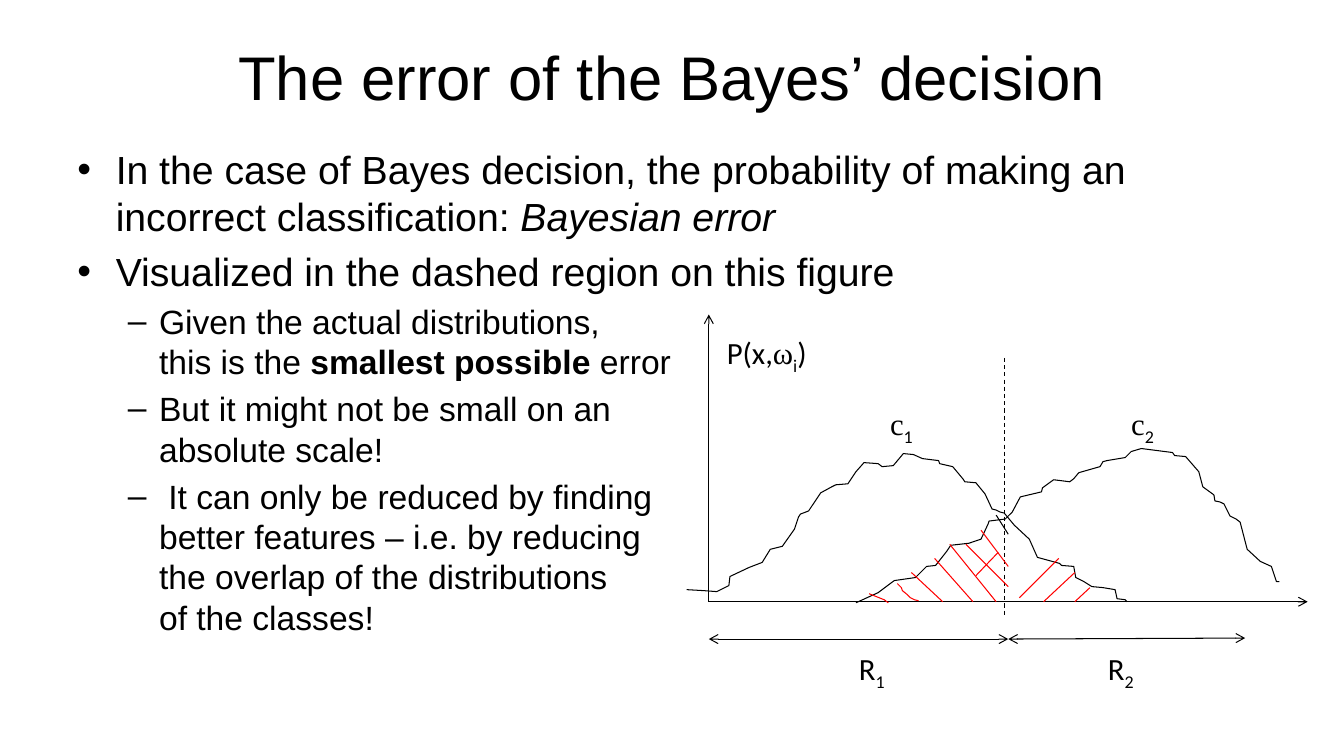
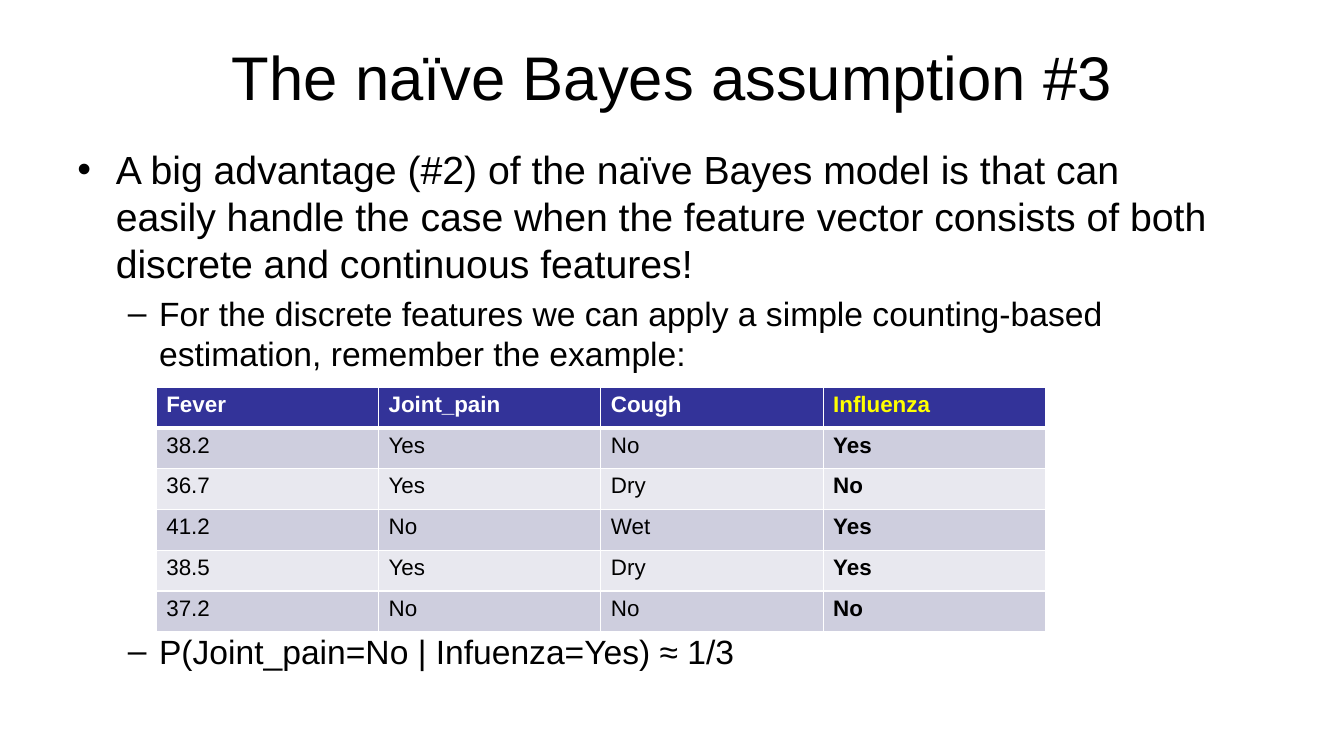
from pptx import Presentation, util as u
from pptx.dml.color import RGBColor
from pptx.enum import dml, shapes, text
from pptx.oxml.ns import qn
from lxml import etree

PX = 9144
BLACK, WHITE, RED = "000000", "FFFFFF", "FF0000"
HEAD, YELLOW, DARK_BAND, LIGHT_BAND = "333399", "FFFF00", "CECEDE", "E8E8EF"
SANS, LABEL, SERIF = "Arial", "Calibri", "Times New Roman"
LEVELS = [
    {"size": 28, "left": 38, "hang": 38, "mark": "•"},
    {"size": 24, "left": 81, "hang": 31, "mark": "–"},
]

LEFT_CLASS = [
    (1, 275), (18, 276), (31, 277), (43, 271), (44, 262), (63, 253), (76, 248),
    (84, 235), (96, 232), (108, 215), (112, 203), (114, 200), (122, 197),
    (134, 179), (145, 173), (149, 171), (161, 170), (167, 161), (169, 158),
    (177, 149), (191, 150), (195, 153), (206, 152), (216, 140), (226, 141),
    (235, 145), (251, 147), (252, 150), (265, 153), (275, 165), (277, 168),
    (288, 169), (297, 180), (304, 195), (308, 196), (312, 198), (316, 199),
    (326, 211), (341, 225), (349, 243), (371, 249), (373, 251), (385, 252),
    (387, 263), (395, 267), (403, 272), (414, 273), (426, 275), (428, 284),
    (436, 285), (438, 287),
]
RIGHT_CLASS = [
    (169, 288), (191, 278), (207, 266), (228, 263), (239, 252), (248, 251),
    (259, 237), (263, 231), (281, 229), (293, 225), (300, 210), (301, 207),
    (317, 205), (324, 198), (332, 183), (353, 178), (354, 174), (365, 166),
    (373, 167), (381, 168), (385, 165), (390, 159), (411, 153), (414, 148),
    (418, 147), (436, 144), (442, 138), (452, 135), (483, 139), (485, 142),
    (496, 143), (509, 158), (513, 173), (524, 181), (525, 187), (530, 188),
    (534, 190), (540, 202), (546, 205), (550, 208), (557, 235), (570, 247),
    (581, 252), (585, 264), (586, 267), (589, 267),
]
CURVED_HATCHES = [
    [(182, 279), (197, 285), (201, 288)],
    [(210, 269), (214, 273), (215, 276), (220, 280), (223, 283), (227, 285), (231, 286)],
]
HATCHES = [
    (370, 244, 331, 283), (224, 258, 255, 287), (247, 244, 285, 287),
    (308, 287, 262, 230), (320, 272, 278, 230), (320, 252, 293, 216),
    (401, 273, 386, 287), (386, 258, 355, 287), (310, 238, 288, 261),
]


def px(*values):
    return [u.Emu(value * PX) for value in values]


def rgb(color):
    return RGBColor.from_string(color)


def add_text(para, content, size=None, font=SANS, color=BLACK, bold=False, italic=False, base=0):
    for index, line in enumerate(content.split("\n")):
        if index:
            para.add_line_break()
        span = para.add_run()
        span.text = line
        span.font.size = u.Pt(size)
        span.font.name = font
        span.font.bold = bold
        span.font.italic = italic
        span.font.color.rgb = rgb(color)
        if base:
            span.font._element.set("baseline", str(base * 1000))


def add_title(page, content, left, top, width, height):
    box = page.shapes.add_textbox(*px(left, top, width, height))
    frame = box.text_frame
    frame.word_wrap = True
    frame.vertical_anchor = text.MSO_ANCHOR.MIDDLE
    para = frame.paragraphs[0]
    para.alignment = text.PP_ALIGN.CENTER
    add_text(para, content, size=44)


def add_body(page, items, left, top, width, height):
    frame = page.shapes.add_textbox(*px(left, top, width, height)).text_frame
    frame.word_wrap = True
    for index, (level, gap, spans) in enumerate(items):
        para = frame.add_paragraph() if index else frame.paragraphs[0]
        style = LEVELS[level]
        props = para._p.get_or_add_pPr()
        props.set("marL", str(style["left"] * PX))
        props.set("indent", str(-style["hang"] * PX))
        etree.SubElement(props, qn("a:buFont")).set("typeface", SANS)
        etree.SubElement(props, qn("a:buChar")).set("char", style["mark"])
        para.level = level
        if index:
            para.space_before = u.Pt(gap or style["size"] * 0.2)
        for content, look in spans:
            add_text(para, content, size=style["size"], **look)


def add_page(deck, title, items):
    page = deck.slides.add_slide(deck.slide_layouts[6])
    add_title(page, title, 67, 13, 1200, 125)
    add_body(page, items, 67, 139, 1143, 495)
    return page


def add_figure(page, left, top):
    def stroke(x1, y1, x2, y2, color=BLACK, dashed=False, ends=()):
        line = page.shapes.add_connector(
            shapes.MSO_CONNECTOR.STRAIGHT, *px(left + x1, top + y1, left + x2, top + y2))
        line.line.color.rgb = rgb(color)
        line.line.width = u.Pt(0.75)
        if dashed:
            line.line.dash_style = dml.MSO_LINE.DASH
        for end in ends:
            etree.SubElement(line.line._get_or_add_ln(), qn("a:" + end)).set("type", "arrow")
        etree.SubElement(line._element.spPr, qn("a:effectLst"))

    def curve(points, color=BLACK):
        placed = [(left + x, top + y) for x, y in points]
        builder = page.shapes.build_freeform(*placed[0], scale=PX)
        builder.add_line_segments(placed[1:], close=False)
        shape = builder.convert_to_shape()
        shape.shadow.inherit = False
        shape.fill.background()
        shape.line.color.rgb = rgb(color)
        shape.line.width = u.Pt(0.75)

    def label(x, y, width, height, *spans):
        box = page.shapes.add_shape(
            shapes.MSO_SHAPE.RECTANGLE, *px(left + x, top + y, width, height))
        box.shadow.inherit = False
        box.fill.solid()
        box.fill.fore_color.rgb = rgb(WHITE)
        box.line.fill.background()
        box.text_frame.vertical_anchor = text.MSO_ANCHOR.TOP
        para = box.text_frame.paragraphs[0]
        para.alignment = text.PP_ALIGN.LEFT
        for content, font, base in spans:
            add_text(para, content, size=22, font=font, base=base)

    stroke(320, 220, 308, 201)
    stroke(23, 287, 617, 287, ends=["tailEnd"])
    stroke(23, 287, 23, 2, ends=["tailEnd"])
    curve(LEFT_CLASS)
    curve(RIGHT_CLASS)
    stroke(316, 45, 316, 301, dashed=True)
    stroke(23, 324, 320, 324, ends=["headEnd", "tailEnd"])
    stroke(320, 324, 555, 323, ends=["headEnd", "tailEnd"])
    for number, region_x, class_x, class_width in (("1", 162, 193, 77), ("2", 409, 432, 62)):
        subscript = (number, LABEL, -25)
        label(region_x, 330, 85, 57, ("R", LABEL, 0), subscript)
        label(class_x, 87, class_width, 43, ("c", SERIF, 0), subscript)
    label(31, 16, 131, 43, ("P(x,", LABEL, 0), ("ω", SERIF, 0), ("i", LABEL, -25), (")", LABEL, 0))
    for points in CURVED_HATCHES:
        curve(points, RED)
    for hatch in HATCHES:
        stroke(*hatch, color=RED)


def add_borders(cell, **widths):
    props = cell._tc.get_or_add_tcPr()
    for index, side in enumerate("LRTB"):
        line = etree.Element(qn("a:ln" + side), w=str(u.Pt(widths.get(side, 1))))
        fill = etree.SubElement(line, qn("a:solidFill"))
        etree.SubElement(fill, qn("a:srgbClr")).set("val", WHITE)
        props.insert(index, line)


def add_data_table(page, rows, left, top, width, height):
    count = len(rows[0])
    table = page.shapes.add_table(len(rows), count, *px(left, top, width, height)).table
    for r, values in enumerate(rows):
        for c, value in enumerate(values):
            cell = table.cell(r, c)
            last = c == count - 1
            cell.fill.solid()
            cell.fill.fore_color.rgb = rgb(HEAD if r == 0 else DARK_BAND if r % 2 else LIGHT_BAND)
            head_color = YELLOW if last else WHITE
            add_text(cell.text_frame.paragraphs[0], value, size=16,
                     color=BLACK if r else head_color, bold=r == 0 or last)
            add_borders(cell, T=3 if r == 1 else 1, B=1 if r else 3)


def error_slide(deck):
    page = add_page(deck, "The error of the Bayes’ decision", [
        (0, None, [("In the case of Bayes decision, the probability of making an "
                    "incorrect classification: ", {}),
                   ("Bayesian error", {"italic": True})]),
        (0, None, [("Visualized in the dashed region on this figure", {})]),
        (1, None, [("Given the actual distributions,\nthis is the ", {}),
                   ("smallest possible", {"bold": True}), (" error", {})]),
        (1, None, [("But it might not be small on an\nabsolute scale!", {})]),
        (1, None, [(" It can only be reduced by finding\nbetter features – i.e. by reducing\n"
                    "the overlap of the distributions\nof the classes!", {})]),
    ])
    add_figure(page, 680, 310)


def naive_slide(deck):
    page = add_page(deck, "The naïve Bayes assumption #3", [
        (0, None, [("A big advantage (#2) of the naïve Bayes model is that can easily handle "
                    "the case when the feature vector consists of both discrete and "
                    "continuous features!", {})]),
        (1, None, [("For the discrete features we can apply a simple counting-based "
                    "estimation, remember the example:", {})]),
        (1, 184, [("P(Joint_pain=No | Infuenza=Yes) ≈ 1/3", {})]),
    ])
    add_data_table(page, [
        ["Fever", "Joint_pain", "Cough", "Influenza"],
        ["38.2", "Yes", "No", "Yes"],
        ["36.7", "Yes", "Dry", "No"],
        ["41.2", "No", "Wet", "Yes"],
        ["38.5", "Yes", "Dry", "Yes"],
        ["37.2", "No", "No", "No"],
    ], 155, 384, 882, 243)


def main():
    deck = Presentation()
    deck.slide_width, deck.slide_height = px(1333, 750)
    error_slide(deck)
    naive_slide(deck)
    deck.save("out.pptx")


if __name__ == "__main__":
    main()
